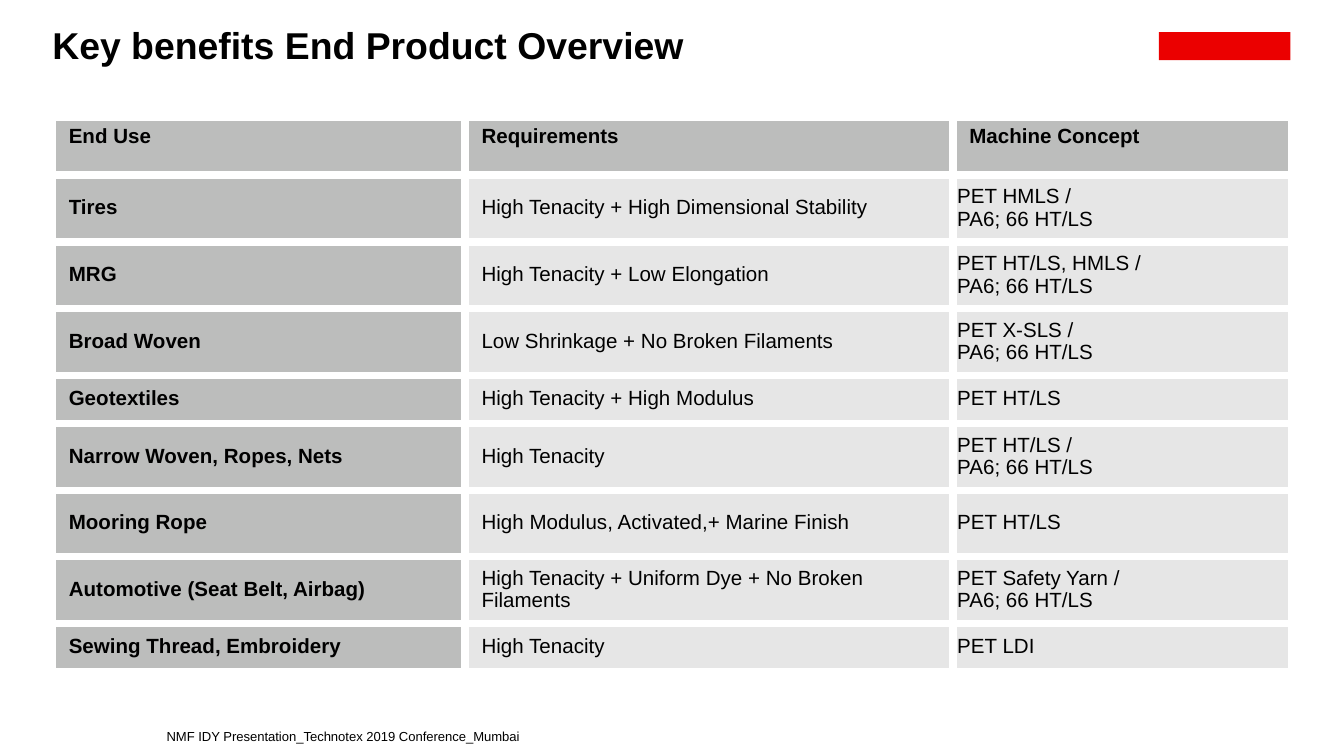
from dataclasses import dataclass

import pptx
import pptx.dml.color
import pptx.enum.shapes
import pptx.enum.text
import pptx.oxml
import pptx.util
from pptx.util import Cm

FONT = "Arial"
BLACK, WHITE, RED = "000000", "FFFFFF", "EB0000"
DARK_GREY, LIGHT_GREY = "BCBDBC", "E6E6E6"
HEADINGS = ("End Use", "Requirements", "Machine Concept")
COLUMN_WIDTHS = (7.8, 9.22, 6.4)
HEADER_HEIGHT, TALL_ROW, SHORT_ROW = 1.1, 1.25, 0.91
TEXT_INDENT = 0.23
NYLON = "PA6; 66 HT/LS"


@dataclass(frozen=True)
class Benefit:
    end_use: str
    requirements: str
    machine: tuple[str, ...]
    height: float = TALL_ROW


BENEFITS = (
    Benefit("Tires", "High Tenacity + High Dimensional Stability", ("PET HMLS /", NYLON)),
    Benefit("MRG", "High Tenacity + Low Elongation", ("PET HT/LS, HMLS /", NYLON)),
    Benefit("Broad Woven", "Low Shrinkage + No Broken Filaments", ("PET X-SLS /", NYLON)),
    Benefit("Geotextiles", "High Tenacity + High Modulus", ("PET HT/LS",), SHORT_ROW),
    Benefit("Narrow Woven, Ropes, Nets", "High Tenacity", ("PET HT/LS /", NYLON)),
    Benefit("Mooring Rope", "High Modulus, Activated,+ Marine Finish", ("PET HT/LS",)),
    Benefit("Automotive (Seat Belt, Airbag)",
            "High Tenacity + Uniform Dye + No Broken Filaments", ("PET Safety Yarn /", NYLON)),
    Benefit("Sewing Thread, Embroidery", "High Tenacity", ("PET LDI",), SHORT_ROW),
)


def color(value: str) -> pptx.dml.color.RGBColor:
    return pptx.dml.color.RGBColor.from_string(value)


def write_lines(frame, lines: tuple[str, ...], size: float, bold: bool = False,
                indent: float = 0) -> None:
    """Write one paragraph per line."""
    frame.word_wrap = True
    for number, line in enumerate(lines):
        paragraph = frame.add_paragraph() if number else frame.paragraphs[0]
        if indent:
            properties = paragraph._p.get_or_add_pPr()
            properties.set("marL", str(Cm(indent)))
            properties.set("indent", "0")
        run = paragraph.add_run()
        run.text = line
        run.font.name = FONT
        run.font.size = pptx.util.Pt(size)
        run.font.bold = bold
        run.font.color.rgb = color(BLACK)


def add_borders(cell, value: str, width: float) -> None:
    properties = cell._tc.get_or_add_tcPr()
    for side in ("lnL", "lnR", "lnT", "lnB"):
        border = pptx.oxml.parse_xml(
            f'<a:{side} xmlns:a="http://schemas.openxmlformats.org/drawingml/2006/main" '
            f'w="{pptx.util.Pt(width)}"><a:solidFill><a:srgbClr val="{value}"/>'
            f'</a:solidFill></a:{side}>')
        properties.append(border)


def fill_cell(cell, lines: tuple[str, ...], fill: str, bold: bool, indent: float,
              anchor: pptx.enum.text.MSO_ANCHOR) -> None:
    cell.margin_left = cell.margin_right = Cm(0.08)
    cell.margin_top, cell.margin_bottom = Cm(0.15), Cm(0.18)
    cell.vertical_anchor = anchor
    add_borders(cell, WHITE, 4.5)
    cell.fill.solid()
    cell.fill.fore_color.rgb = color(fill)
    write_lines(cell.text_frame, lines, 11, bold, indent)


def add_benefits(slide) -> None:
    heights = [HEADER_HEIGHT] + [benefit.height for benefit in BENEFITS]
    table = slide.shapes.add_table(
        len(heights), len(HEADINGS), Cm(0.99), Cm(2.21),
        Cm(sum(COLUMN_WIDTHS)), Cm(sum(heights))).table
    table.first_row = table.horz_banding = False
    for column, width in zip(table.columns, COLUMN_WIDTHS):
        column.width = Cm(width)
    for row, height in zip(table.rows, heights):
        row.height = Cm(height)

    anchors = pptx.enum.text.MSO_ANCHOR
    for column, heading in enumerate(HEADINGS):
        fill_cell(table.cell(0, column), (heading,), DARK_GREY, True, TEXT_INDENT, anchors.TOP)
    for row, benefit in enumerate(BENEFITS, start=1):
        columns = (
            ((benefit.end_use,), DARK_GREY, True, TEXT_INDENT),
            ((benefit.requirements,), LIGHT_GREY, False, TEXT_INDENT),
            (benefit.machine, LIGHT_GREY, False, 0),
        )
        for column, (lines, fill, bold, indent) in enumerate(columns):
            fill_cell(table.cell(row, column), lines, fill, bold, indent, anchors.MIDDLE)


def main() -> None:
    presentation = pptx.Presentation()
    presentation.slide_width, presentation.slide_height = Cm(25.4), Cm(14.29)
    slide = presentation.slides.add_slide(presentation.slide_layouts[6])

    # Brand mark
    brand = slide.shapes.add_shape(
        pptx.enum.shapes.MSO_SHAPE.RECTANGLE, Cm(21.9), Cm(0.61), Cm(2.49), Cm(0.53))
    brand.shadow.inherit = False
    brand.fill.solid()
    brand.fill.fore_color.rgb = color(RED)
    brand.line.fill.background()

    # Title
    title = slide.shapes.add_textbox(Cm(0.99), Cm(0.51), Cm(18.39), Cm(1.93)).text_frame
    title.margin_left = title.margin_right = title.margin_top = title.margin_bottom = 0
    write_lines(title, ("Key benefits End Product Overview",), 20, bold=True)
    title.paragraphs[0].line_spacing = 0.9

    # Benefits by end use
    add_benefits(slide)

    # Footer
    footer = slide.shapes.add_textbox(Cm(2.9), Cm(13.64), Cm(19), Cm(0.28)).text_frame
    write_lines(footer, ("NMF IDY Presentation_Technotex 2019 Conference_Mumbai",), 7)

    presentation.save("out.pptx")


if __name__ == "__main__":
    main()
